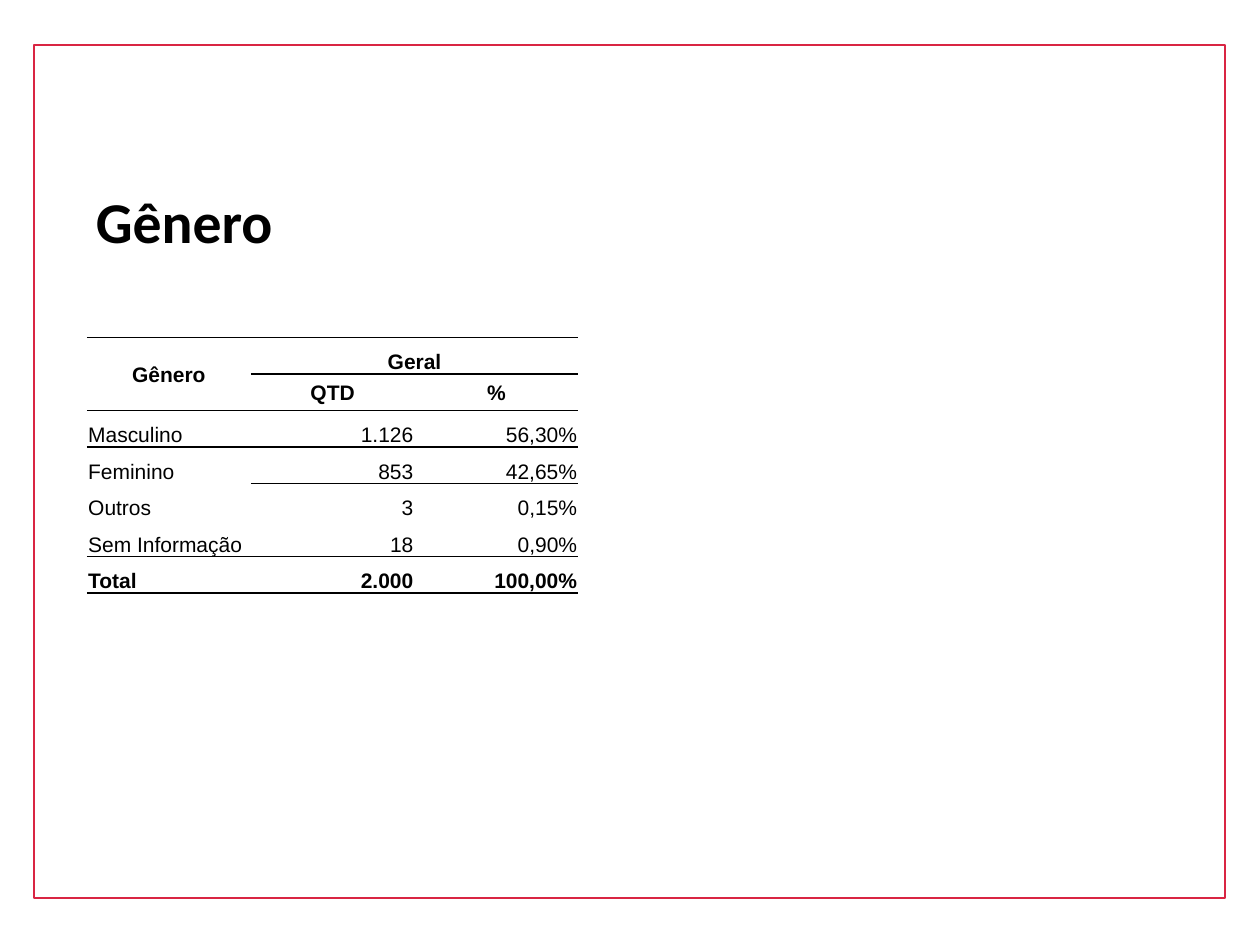
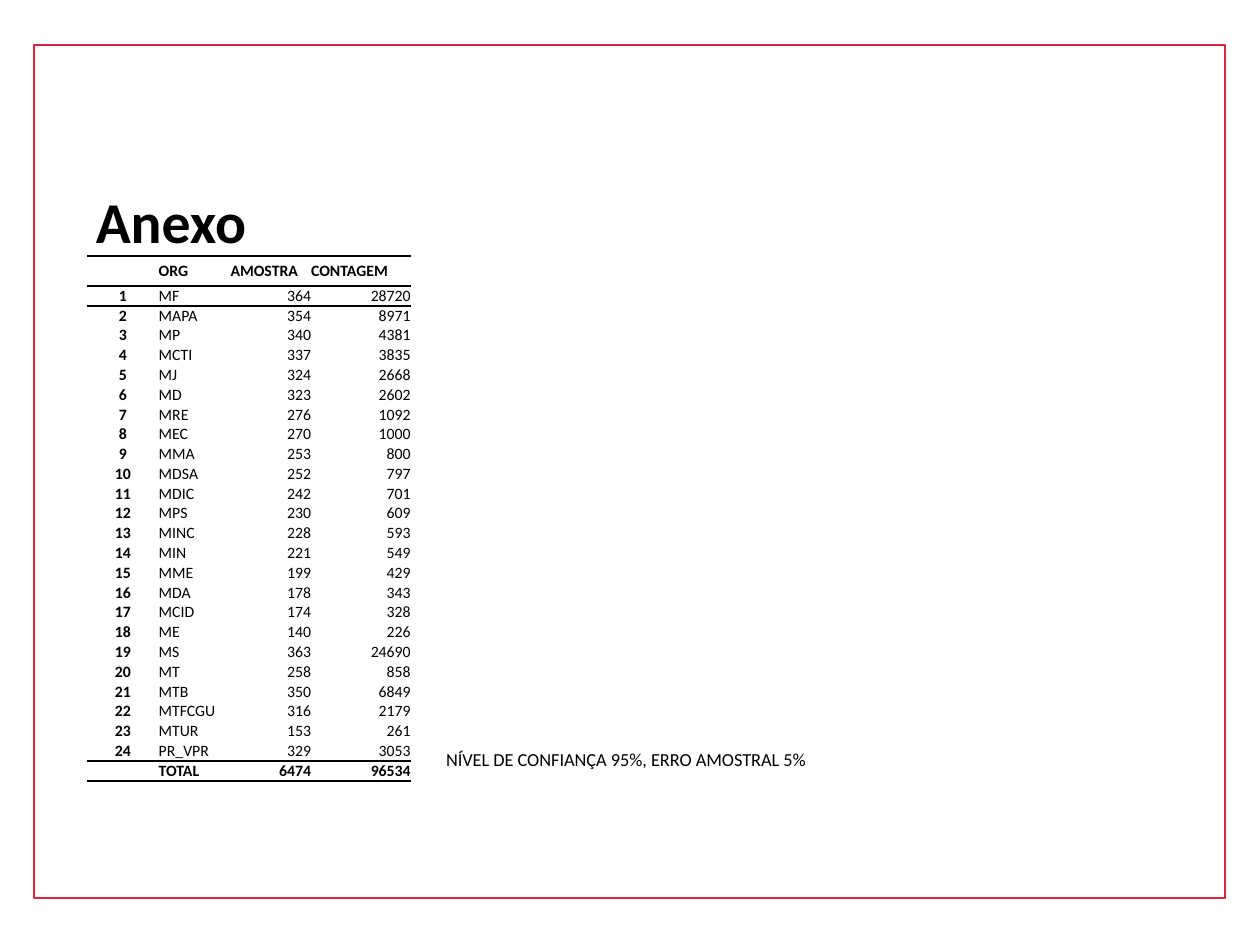
from lxml.etree import SubElement
from pptx import Presentation
from pptx.dml.color import RGBColor
from pptx.enum.shapes import MSO_SHAPE
from pptx.enum.text import MSO_ANCHOR, PP_ALIGN
from pptx.oxml.ns import qn
from pptx.util import Inches, Pt

COLORS = {"frame": "D92543", "ink": "000000", "page": "FFFFFF"}
PLAIN_TABLE = "{2D5ABB26-0587-4C30-8999-92F81FD0307C}"
LEFT, CENTER, RIGHT = PP_ALIGN.LEFT, PP_ALIGN.CENTER, PP_ALIGN.RIGHT
MARGIN = 0.69

gender_rows = [
    ("Gênero", "Geral", ""),
    ("", "QTD", "%"),
    ("Masculino", "1.126", "56,30%"),
    ("Feminino", "853", "42,65%"),
    ("Outros", "3", "0,15%"),
    ("Sem Informação", "18", "0,90%"),
    ("Total", "2.000", "100,00%"),
]
samples = [
    ("MF", 364, 28720), ("MAPA", 354, 8971), ("MP", 340, 4381),
    ("MCTI", 337, 3835), ("MJ", 324, 2668), ("MD", 323, 2602),
    ("MRE", 276, 1092), ("MEC", 270, 1000), ("MMA", 253, 800),
    ("MDSA", 252, 797), ("MDIC", 242, 701), ("MPS", 230, 609),
    ("MINC", 228, 593), ("MIN", 221, 549), ("MME", 199, 429),
    ("MDA", 178, 343), ("MCID", 174, 328), ("ME", 140, 226),
    ("MS", 363, 24690), ("MT", 258, 858), ("MTB", 350, 6849),
    ("MTFCGU", 316, 2179), ("MTUR", 153, 261), ("PR_VPR", 329, 3053),
]
sample_rows = [("", "ORG", "AMOSTRA", "CONTAGEM")]
sample_rows += [(number, *sample) for number, sample in enumerate(samples, 1)]
sample_rows.append(("", "TOTAL", 6474, 96534))

# Each rule is the grid line it lies on and the column it starts from
tables = [
    dict(title="Gênero", rows=gender_rows, top=2.68, widths=[1.3] * 3,
         heights=[0.29] * 7, font="Arial", size=12, headers=2, header_align=CENTER,
         aligns=[LEFT, RIGHT, RIGHT], bold_columns=[], anchor=MSO_ANCHOR.BOTTOM,
         inset=0.01, rules=[(0, 0), (1, 1), (2, 0), (3, 1), (6, 0), (7, 0)],
         merges=[((0, 0), (1, 0)), ((0, 1), (0, 2))]),
    dict(title="Anexo", rows=sample_rows, top=2.03, widths=[0.57, 0.57, 0.64, 0.79],
         heights=[0.24] + [3.93 / 25] * 25, font="Calibri", size=9, headers=1,
         header_align=LEFT, aligns=[CENTER, LEFT, RIGHT, RIGHT], bold_columns=[0],
         anchor=MSO_ANCHOR.MIDDLE, inset=0,
         rules=[(0, 0), (1, 0), (25, 0), (26, 0)], merges=[]),
]


def style_text(paragraph, font, size, bold):
    for span in paragraph.runs:
        span.font.name, span.font.size, span.font.bold = font, Pt(size), bold
        span.font.color.rgb = RGBColor.from_string(COLORS["ink"])
    if not paragraph.runs:
        SubElement(paragraph._p, qn("a:endParaRPr"), sz=str(size * 100))


def add_text(page, text, area, inset, size, bold, anchor):
    box = page.shapes.add_textbox(*[Inches(length) for length in area])
    frame = box.text_frame
    frame.word_wrap = True
    frame.vertical_anchor = anchor
    frame.margin_left = frame.margin_right = Inches(0.07)
    frame.margin_top = frame.margin_bottom = Inches(inset)
    frame.text = text
    style_text(frame.paragraphs[0], "Calibri", size, bold)
    return frame.paragraphs[0]


deck = Presentation()
deck.slide_width, deck.slide_height = Inches(10), Inches(7.5)

for design in tables:
    page = deck.slides.add_slide(deck.slide_layouts[6])
    page.background.fill.solid()
    page.background.fill.fore_color.rgb = RGBColor.from_string(COLORS["page"])

    # Frame and title
    border = page.shapes.add_shape(MSO_SHAPE.RECTANGLE, Inches(0.27), Inches(0.36),
                                   Inches(9.45), Inches(6.77))
    border.shadow.inherit = False
    border.fill.background()
    border.line.color.rgb = RGBColor.from_string(COLORS["frame"])
    border.line.width = Pt(1)
    title = add_text(page, design["title"], (MARGIN, 1.24, 8.62, 1.09), 0.07,
                     33, True, MSO_ANCHOR.MIDDLE)
    title.line_spacing = 0.9

    # Table grid
    rows, widths, heights = design["rows"], design["widths"], design["heights"]
    holder = page.shapes.add_table(len(rows), len(widths), Inches(MARGIN),
                                   Inches(design["top"]), Inches(sum(widths)),
                                   Inches(sum(heights)))
    table = holder.table
    table.first_row = table.horz_banding = False
    table._tbl.tblPr.find(qn("a:tableStyleId")).text = PLAIN_TABLE
    for column, width in zip(table.columns, widths):
        column.width = Inches(width)
    for row, height in zip(table.rows, heights):
        row.height = Inches(height)
    for start, end in design["merges"]:
        table.cell(*start).merge(table.cell(*end))

    # Cells
    for r, values in enumerate(rows):
        header = r < design["headers"]
        edge_row = header or r == len(rows) - 1
        for c, value in enumerate(values):
            cell = table.cell(r, c)
            cell.margin_left = cell.margin_right = Inches(design["inset"])
            cell.margin_top, cell.margin_bottom = Inches(design["inset"]), 0
            cell.vertical_anchor = MSO_ANCHOR.MIDDLE if header else design["anchor"]
            if value == "Geral":
                cell.vertical_anchor = MSO_ANCHOR.BOTTOM
            paragraph = cell.text_frame.paragraphs[0]
            paragraph.text = str(value)
            paragraph.alignment = design["header_align"] if header else design["aligns"][c]
            style_text(paragraph, design["font"], design["size"],
                       edge_row or c in design["bold_columns"])

            # Horizontal rules above and below
            for tag, grid_line in (("a:lnT", r), ("a:lnB", r + 1)):
                if any(line == grid_line and c >= first for line, first in design["rules"]):
                    edge = SubElement(cell._tc.get_or_add_tcPr(), qn(tag), w=str(Pt(1)))
                    ink = SubElement(edge, qn("a:solidFill"))
                    SubElement(ink, qn("a:srgbClr"), val=COLORS["ink"])
            cell.fill.background()

# Sampling note beside the last table
add_text(page, "NÍVEL DE CONFIANÇA 95%, ERRO AMOSTRAL 5%", (3.47, 5.9, 3.06, 0.25),
         0.04, 10.5, False, MSO_ANCHOR.TOP)

deck.save("out.pptx")
